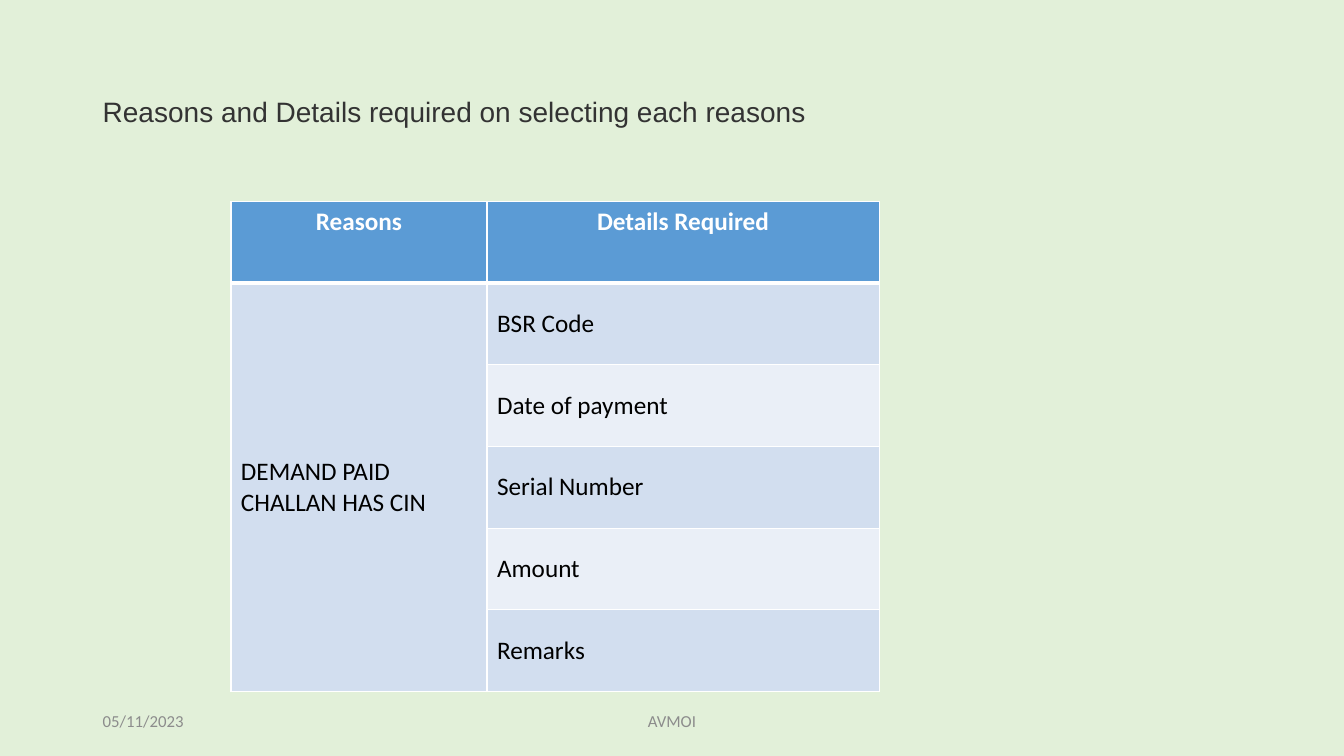
"""Build the slide listing the details required for each reason."""
from lxml import etree
from pptx import Presentation
from pptx import util as u
from pptx.dml.color import RGBColor
from pptx.enum import text as t
from pptx.oxml import ns

WIDE, HIGH = 13.33, 7.5
HUES = {"page": "E2F0D9", "title": "333333", "note": "8C8C8C", "head": "5B9BD5",
        "dark": "D2DEEF", "light": "EAEFF7", "white": "FFFFFF", "black": "000000"}
TITLE = "Reasons and Details required on selecting each reasons"
HEADS = ["Reasons", "Details Required"]
REASON = ["DEMAND PAID", "CHALLAN HAS CIN"]
DETAILS = ["BSR Code", "Date of payment", "Serial Number", "Amount", "Remarks"]
DATE, BODY = "05/11/2023", "AVMOI"
LEFT, TOP, COLS, ROW = 2.29, 2, [2.54, 3.89], 0.81
MARGIN, FOOT = 0.92, 6.95
MID, TIP = t.MSO_ANCHOR.MIDDLE, t.MSO_ANCHOR.TOP


def tint(name):
    return RGBColor.from_string(HUES[name])


def write(frame, lines, size=18, font="Calibri", hue="black", bold=False,
          center=False, space=None):
    for i, line in enumerate(lines):
        par = frame.paragraphs[0] if i == 0 else frame.add_paragraph()
        par.alignment = t.PP_ALIGN.CENTER if center else t.PP_ALIGN.LEFT
        par.line_spacing = space
        run = par.add_run()
        run.text = line
        run.font.size, run.font.name, run.font.bold = u.Pt(size), font, bold
        run.font.color.rgb = tint(hue)


def label(slide, line, box, **style):
    frame = slide.shapes.add_textbox(*map(u.Inches, box)).text_frame
    frame.word_wrap, frame.vertical_anchor = True, MID
    write(frame, [line], **style)


def edge(cell, row):
    props = cell._tc.get_or_add_tcPr()
    wide = {"lnL": 1, "lnR": 1, "lnT": 3 if row == 1 else 1, "lnB": 3 if row == 0 else 1}
    for i, (side, width) in enumerate(wide.items()):
        line = etree.Element(ns.qn("a:" + side), w=str(u.Pt(width)))
        fill = etree.SubElement(line, ns.qn("a:solidFill"))
        etree.SubElement(fill, ns.qn("a:srgbClr"), val=HUES["white"])
        props.insert(i, line)


def shade(cell, row, hue, anchor):
    cell.fill.solid()
    cell.fill.fore_color.rgb = tint(hue)
    cell.vertical_anchor = anchor
    edge(cell, row)


def grid(slide):
    count = len(DETAILS) + 1
    box = map(u.Inches, (LEFT, TOP, sum(COLS), ROW * count))
    table = slide.shapes.add_table(count, len(COLS), *box).table
    for col, width in zip(table.columns, COLS):
        col.width = u.Inches(width)
    for col, head in enumerate(HEADS):
        cell = table.cell(0, col)
        shade(cell, 0, "head", TIP)
        write(cell.text_frame, [head], hue="white", bold=True, center=True)
    for row, detail in enumerate(DETAILS, 1):
        shade(table.cell(row, 0), row, "dark", MID)
        cell = table.cell(row, 1)
        shade(cell, row, "dark" if row % 2 else "light", MID)
        write(cell.text_frame, [detail])
    table.cell(1, 0).merge(table.cell(count - 1, 0))
    write(table.cell(1, 0).text_frame, REASON)


def main():
    deck = Presentation()
    deck.slide_width, deck.slide_height = u.Inches(WIDE), u.Inches(HIGH)
    slide = deck.slides.add_slide(deck.slide_layouts[6])
    slide.background.fill.solid()
    slide.background.fill.fore_color.rgb = tint("page")
    label(slide, TITLE, (MARGIN, 0.4, 11.5, 1.45), size=20, font="Arial",
          hue="title", space=0.9)
    grid(slide)
    label(slide, DATE, (MARGIN, FOOT, 3, 0.4), size=12, hue="note")
    label(slide, BODY, ((WIDE - 4.5) / 2, FOOT, 4.5, 0.4), size=12, hue="note", center=True)
    deck.save("out.pptx")


if __name__ == "__main__":
    main()
